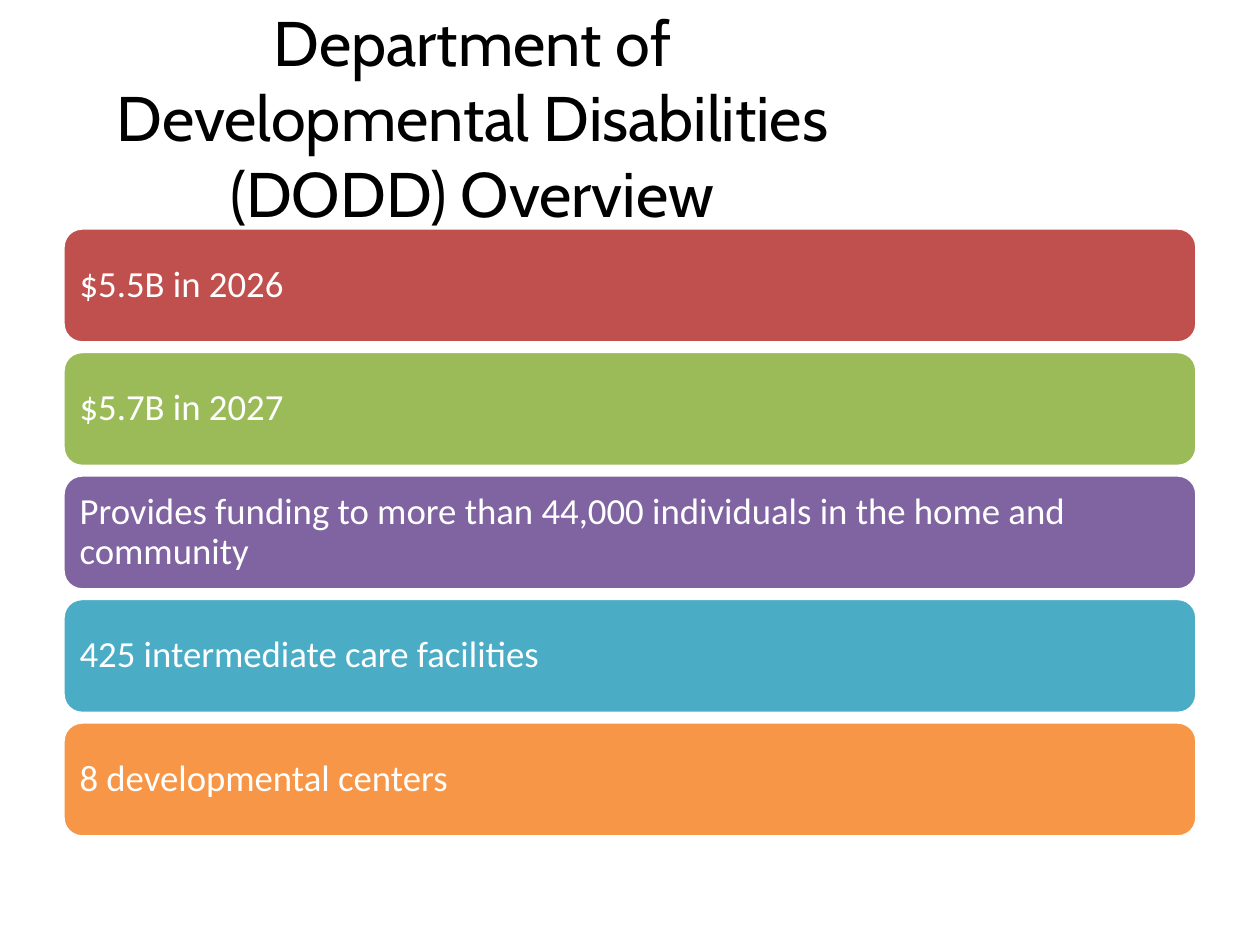
from pptx import Presentation
from pptx.dml.color import RGBColor
from pptx.enum.shapes import MSO_SHAPE
from pptx.enum.text import MSO_ANCHOR, PP_ALIGN
from pptx.util import Emu, Pt

THEME = {
    "title": ("Cabin", 36, "000000"),
    "body": ("Calibri", 21, "FFFFFF"),
    "outline": "FFFFFF",
    "bars": ["C0504D", "9BBB59", "8064A2", "4BACC6", "F79646"],
}
FACTS = [
    "$5.5B in 2026",
    "$5.7B in 2027",
    "Provides funding to more than 44,000 individuals in the home and community",
    "425 intermediate care facilities",
    "8 developmental centers",
]
BAR_LEFT, BAR_TOP, BAR_W, BAR_H = 63, 228, 1134, 115
LAST_BAR_TOP = 722
INSET = 11


def px(n):
    return Emu(round(n * 914400 / 126))


def add_text(sp, text, style, align):
    tf = sp.text_frame
    tf.word_wrap = True
    tf.vertical_anchor = MSO_ANCHOR.MIDDLE
    p = tf.paragraphs[0]
    p.alignment = align
    r = p.add_run()
    r.text = text
    name, size, color = THEME[style]
    r.font.name = name
    r.font.size = Pt(size)
    r.font.color.rgb = RGBColor.from_string(color)
    return tf


prs = Presentation()
prs.slide_width, prs.slide_height = px(1260), px(945)
s = prs.slides.add_slide(prs.slide_layouts[6])

title = s.shapes.add_textbox(px(63), px(38), px(819), px(157))
add_text(title, "Department of Developmental Disabilities (DODD) Overview",
         "title", PP_ALIGN.CENTER)

pitch = (LAST_BAR_TOP - BAR_TOP) / (len(FACTS) - 1)
for i, (fact, color) in enumerate(zip(FACTS, THEME["bars"])):
    sp = s.shapes.add_shape(MSO_SHAPE.ROUNDED_RECTANGLE, px(BAR_LEFT),
                            px(BAR_TOP + i * pitch), px(BAR_W), px(BAR_H))
    sp.shadow.inherit = False
    sp.fill.solid()
    sp.fill.fore_color.rgb = RGBColor.from_string(color)
    sp.line.color.rgb = RGBColor.from_string(THEME["outline"])
    sp.line.width = Pt(2)
    tf = add_text(sp, fact, "body", PP_ALIGN.LEFT)
    tf.margin_left = tf.margin_right = px(INSET)
    tf.margin_top = tf.margin_bottom = px(INSET)
    tf.paragraphs[0].line_spacing = 0.9

prs.save("out.pptx")
